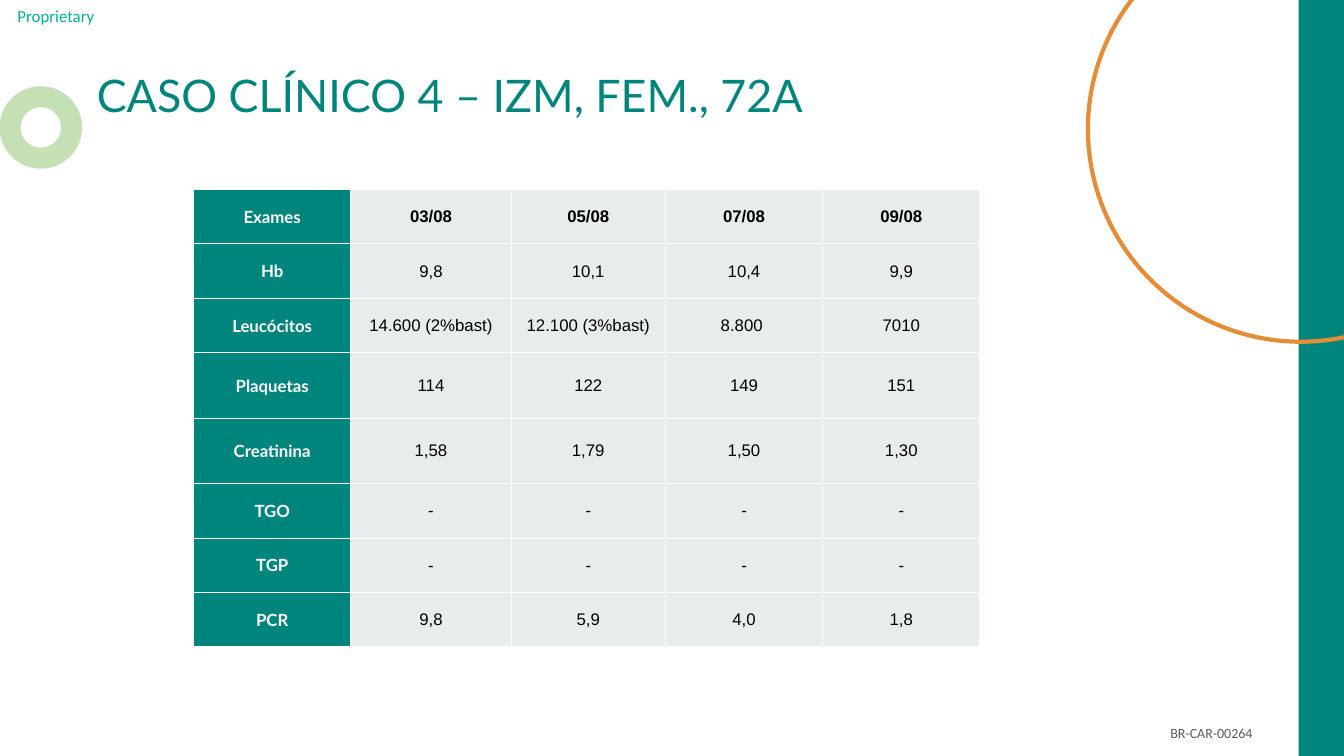
from lxml.etree import SubElement
from pptx import Presentation
from pptx.dml.color import RGBColor
from pptx.enum.shapes import MSO_SHAPE
from pptx.enum.text import MSO_ANCHOR, MSO_AUTO_SIZE, PP_ALIGN
from pptx.oxml.ns import qn
from pptx.util import Inches, Pt

TEAL = RGBColor(0x00, 0x85, 0x7C)
MINT = RGBColor(0x00, 0xB2, 0x94)
GREEN = RGBColor(0xC5, 0xE0, 0xB4)
ORANGE = RGBColor(0xE4, 0x8C, 0x36)
GRAY = RGBColor(0x5B, 0x5B, 0x5B)
PALE = RGBColor(0xE7, 0xED, 0xEC)
WHITE = RGBColor(0xFF, 0xFF, 0xFF)
BLACK = RGBColor(0x00, 0x00, 0x00)

EXAMS = [
    ["Exames", "03/08", "05/08", "07/08", "09/08"],
    ["Hb", "9,8", "10,1", "10,4", "9,9"],
    ["Leucócitos", "14.600 (2%bast)", "12.100 (3%bast)", "8.800 ", "7010"],
    ["Plaquetas", "114", "122", "149", "151"],
    ["Creatinina", "1,58", "1,79", "1,50", "1,30"],
    ["TGO", "-", "-", "-", "-"],
    ["TGP", "-", "-", "-", "-"],
    ["PCR", "9,8", "5,9", "4,0", "1,8"],
]
COLUMN_WIDTHS = [1.56, 1.59, 1.53, 1.56, 1.56]
ROW_HEIGHTS = [0.54, 0.54, 0.54, 0.65, 0.65, 0.54, 0.54, 0.54]


class SlideBuilder:
    def __init__(self, slide):
        self.s = slide

    def apply(self, target, values):
        for name, value in values.items():
            setattr(target, name, value)

    def add_text(self, tf, text, size, font, color, bold=False, align=PP_ALIGN.LEFT):
        p = tf.paragraphs[0]
        p.alignment = align
        r = p.add_run()
        r.text = text
        self.apply(r.font, {"size": Pt(size), "name": font, "bold": bold})
        r.font.color.rgb = color
        return p

    def margins(self, target, x, y):
        self.apply(target, {
            "margin_left": Inches(x), "margin_right": Inches(x),
            "margin_top": Inches(y), "margin_bottom": Inches(y),
        })

    def title(self, text, box):
        sp = self.s.shapes.title
        self.apply(sp, dict(zip(("left", "top", "width", "height"), map(Inches, box))))
        tf = sp.text_frame
        self.apply(tf, {"word_wrap": True, "auto_size": MSO_AUTO_SIZE.NONE,
                        "vertical_anchor": MSO_ANCHOR.MIDDLE})
        self.add_text(tf, text, 32, "Lato", TEAL).line_spacing = 0.9

    def text(self, text, box, size, color, align, anchor, inset):
        tf = self.s.shapes.add_textbox(*map(Inches, box)).text_frame
        self.apply(tf, {"word_wrap": True, "vertical_anchor": anchor})
        self.margins(tf, *inset)
        self.add_text(tf, text, size, "Calibri", color, align=align)

    def bar(self, box, rotation, color):
        sp = self.s.shapes.add_shape(MSO_SHAPE.RECTANGLE, *map(Inches, box))
        sp.rotation = rotation
        sp.shadow.inherit = False
        sp.fill.solid()
        sp.fill.fore_color.rgb = color
        sp.line.fill.background()

    def ring(self, left, top, diameter, color, width):
        sp = self.s.shapes.add_shape(
            MSO_SHAPE.OVAL, *map(Inches, (left, top, diameter, diameter)))
        sp.shadow.inherit = False
        sp.fill.background()
        sp.line.color.rgb = color
        sp.line.width = Pt(width)

    def borders(self, cell, color, width):
        tc_pr = cell._tc.get_or_add_tcPr()
        for side in ("lnL", "lnR", "lnT", "lnB"):
            ln = SubElement(tc_pr, qn(f"a:{side}"), w=str(Pt(width)))
            fill = SubElement(ln, qn("a:solidFill"))
            SubElement(fill, qn("a:srgbClr"), val=str(color))

    def table(self, rows, left, top, widths, heights):
        table = self.s.shapes.add_table(
            len(rows), len(widths),
            *map(Inches, (left, top, sum(widths), sum(heights)))).table
        self.apply(table, {"first_row": False, "horz_banding": False})
        for column, width in zip(table.columns, widths):
            column.width = Inches(width)
        for row, height in zip(table.rows, heights):
            row.height = Inches(height)
        for i, row in enumerate(rows):
            for j, text in enumerate(row):
                cell = table.cell(i, j)
                label = j == 0
                self.borders(cell, WHITE, 1)
                cell.fill.solid()
                cell.fill.fore_color.rgb = TEAL if label else PALE
                cell.vertical_anchor = MSO_ANCHOR.MIDDLE
                self.margins(cell, *((0.1, 0.1) if label or i < 2 else (0.03, 0.02)))
                self.add_text(cell.text_frame, text, 12, "Lato" if label else "Arial",
                              WHITE if label else BLACK, label or i == 0, PP_ALIGN.CENTER)


def main():
    prs = Presentation()
    prs.slide_width = Inches(13.33)
    prs.slide_height = Inches(7.5)
    b = SlideBuilder(prs.slides.add_slide(prs.slide_layouts[5]))
    b.text("Proprietary", (0, 0, 1.11, 0.32), 12, MINT,
           PP_ALIGN.CENTER, MSO_ANCHOR.MIDDLE, (0, 0))
    b.bar((9.52, 3.36, 7.5, 0.78), 270, TEAL)
    b.ring(0.1, 0.96, 0.61, GREEN, 15)
    b.text("BR-CAR-00264", (11.51, 7.14, 1.2, 0.27), 10, GRAY,
           PP_ALIGN.LEFT, MSO_ANCHOR.TOP, (0.1, 0.05))
    b.ring(10.79, -0.83, 4.22, ORANGE, 3)
    b.title("CASO CLÍNICO 4 – IZM, FEM., 72A", (0.86, 0.67, 11.26, 0.61))
    b.table(EXAMS, 1.92, 1.88, COLUMN_WIDTHS, ROW_HEIGHTS)
    prs.save("out.pptx")


if __name__ == "__main__":
    main()
